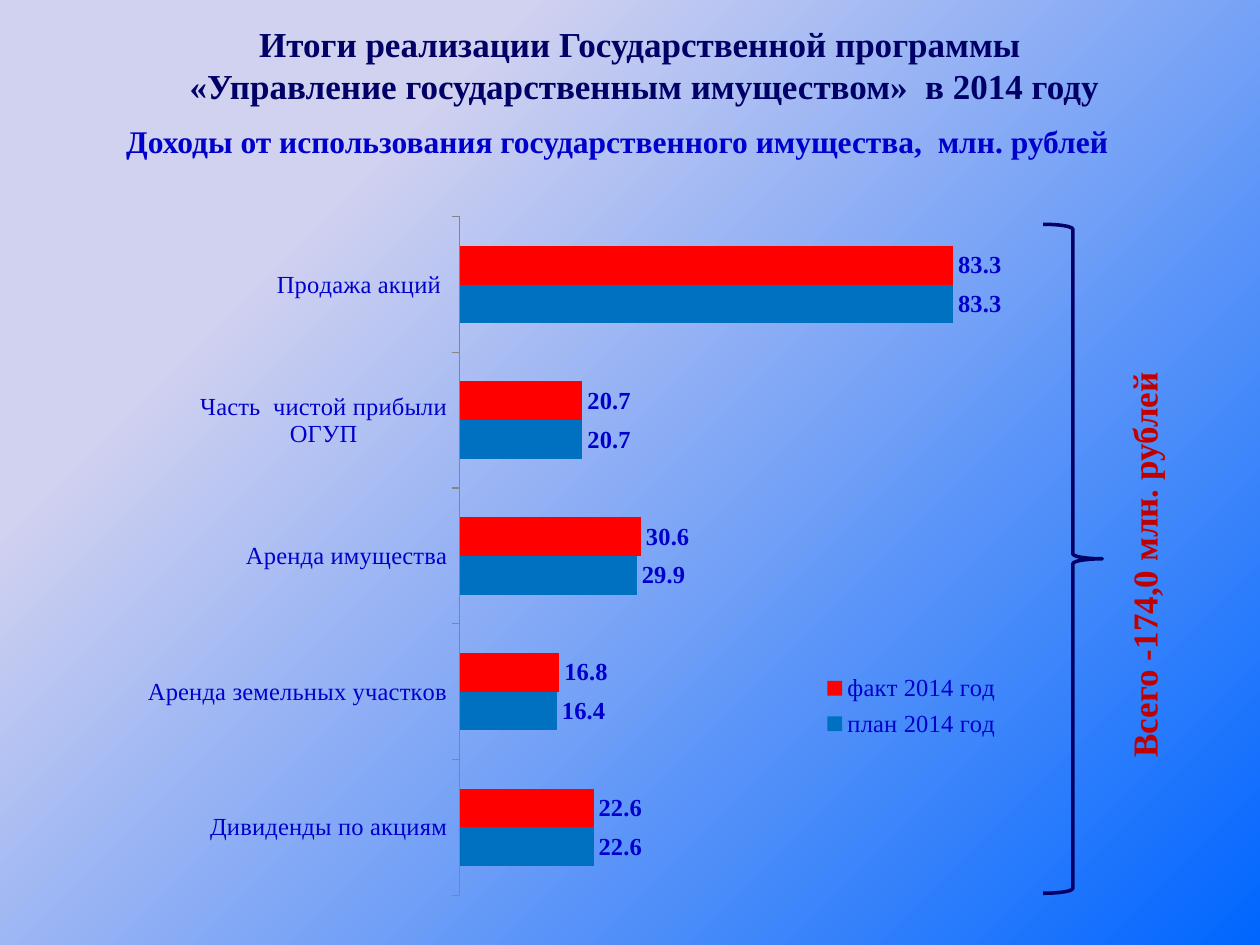
from lxml import etree
from pptx import Presentation
from pptx.chart.data import CategoryChartData
from pptx.dml.color import RGBColor
from pptx.enum.chart import XL_CHART_TYPE, XL_LABEL_POSITION, XL_LEGEND_POSITION, XL_TICK_MARK
from pptx.enum.shapes import MSO_SHAPE
from pptx.enum.text import MSO_ANCHOR, PP_ALIGN
from pptx.oxml.ns import qn
from pptx.util import Inches, Pt

BAR = XL_CHART_TYPE.BAR_CLUSTERED
OUTSIDE_END = XL_LABEL_POSITION.OUTSIDE_END
LEGEND_RIGHT = XL_LEGEND_POSITION.RIGHT
TICK_OUT, TICK_NONE = XL_TICK_MARK.OUTSIDE, XL_TICK_MARK.NONE
RIGHT_BRACE = MSO_SHAPE.RIGHT_BRACE
TOP, MIDDLE = MSO_ANCHOR.TOP, MSO_ANCHOR.MIDDLE
LEFT, CENTER = PP_ALIGN.LEFT, PP_ALIGN.CENTER

FONT = "Times New Roman"
NAVY = RGBColor(0x00, 0x00, 0x66)
BLUE = RGBColor(0x00, 0x00, 0xCC)
DARK_RED = RGBColor(0xC0, 0x00, 0x00)
RED = RGBColor(0xFF, 0x00, 0x00)
PLAN_BLUE = RGBColor(0x00, 0x70, 0xC0)
GREY = RGBColor(0x86, 0x86, 0x86)
LAVENDER = RGBColor(0xD1, 0xD1, 0xF0)
BRIGHT_BLUE = RGBColor(0x00, 0x66, 0xFF)

CATEGORIES = ["Дивиденды по акциям", "Аренда земельных участков", "Аренда имущества",
              "Часть  чистой прибыли ОГУП", "Продажа акций "]
SERIES = [
    ("план 2014 год", [22.6, 16.4, 29.9, 20.7, 83.3], PLAN_BLUE),
    ("факт 2014 год", [22.6, 16.8, 30.6, 20.7, 83.3], RED),
]


def set_font(font, size, color, bold=False):
    font.name = FONT
    font.size = Pt(size)
    font.bold = bold
    font.color.rgb = color


def set_background(s):
    fill = s.background.fill
    fill.gradient()
    fill.gradient_angle = 315
    for stop, position, color in zip(fill.gradient_stops, (0.24, 1), (LAVENDER, BRIGHT_BLUE)):
        stop.position = position
        stop.color.rgb = color


def add_text(s, box, lines, size, color, align=CENTER, anchor=TOP):
    tf = s.shapes.add_textbox(*map(Inches, box)).text_frame
    tf.word_wrap = True
    tf.vertical_anchor = anchor
    for i, line in enumerate(lines):
        p = tf.paragraphs[0] if i == 0 else tf.add_paragraph()
        p.text = line
        p.alignment = align
        set_font(p.font, size, color, bold=True)
    return tf


def set_layout(parent, x, y, w, h, inner=False):
    """Place a chart part by fractions of the chart area."""
    for old in parent.findall(qn("c:layout")):
        parent.remove(old)
    layout = etree.Element(qn("c:layout"))
    manual = etree.SubElement(layout, qn("c:manualLayout"))
    values = [("layoutTarget", "inner")] if inner else []
    values += [("xMode", "edge"), ("yMode", "edge"), ("x", x), ("y", y), ("w", w), ("h", h)]
    for tag, value in values:
        etree.SubElement(manual, qn(f"c:{tag}")).set("val", str(value))
    position = parent.find(qn("c:legendPos"))
    parent.insert(0 if position is None else parent.index(position) + 1, layout)


def add_income_chart(s, box):
    data = CategoryChartData(number_format="0.0")
    data.categories = CATEGORIES
    for name, values, _ in SERIES:
        data.add_series(name, values)
    chart = s.shapes.add_chart(BAR, *map(Inches, box), data).chart
    chart.has_title = False
    chart.font.name = FONT
    chart.font.size = Pt(10)

    # Bars and their values
    plot = chart.plots[0]
    plot.gap_width = 150
    plot.overlap = 0
    plot.vary_by_categories = False
    for series, (_, _, color) in zip(plot.series, SERIES):
        series.format.fill.solid()
        series.format.fill.fore_color.rgb = color
        labels = series.data_labels
        labels.show_value = True
        labels.number_format = "0.0"
        labels.number_format_is_linked = False
        labels.position = OUTSIDE_END
        set_font(labels.font, 14, BLUE, bold=True)

    # Axes
    axis = chart.category_axis
    axis.major_tick_mark = TICK_OUT
    axis.minor_tick_mark = TICK_NONE
    axis.format.line.color.rgb = GREY
    set_font(axis.tick_labels.font, 14, BLUE)
    axis = chart.value_axis
    axis.visible = False
    axis.has_major_gridlines = False
    axis.minimum_scale, axis.maximum_scale = 0, 90

    # Legend and plot position
    chart.has_legend = True
    legend = chart.legend
    legend.position = LEGEND_RIGHT
    legend.include_in_layout = False
    set_font(legend.font, 14, BLUE)
    chart_xml = chart.element.find(qn("c:chart"))
    set_layout(chart_xml.find(qn("c:legend")), 0.74, 0.66, 0.22, 0.11)
    set_layout(chart_xml.find(qn("c:plotArea")), 0.35, 0.03, 0.59, 0.95, inner=True)


def add_total(s, brace_box, label_box):
    brace = s.shapes.add_shape(RIGHT_BRACE, *map(Inches, brace_box))
    brace.shadow.inherit = False
    brace.fill.background()
    brace.line.color.rgb = NAVY
    brace.line.width = Pt(2)
    tf = add_text(s, label_box, ["Всего -174,0 млн. рублей"], 20, DARK_RED, align=LEFT)
    tf._txBody.bodyPr.set("vert", "vert270")


def main():
    prs = Presentation()
    prs.slide_width, prs.slide_height = Inches(10), Inches(7.5)
    s = prs.slides.add_slide(prs.slide_layouts[6])
    set_background(s)
    add_text(s, (0.4, 0.85, 9, 0.54),
             ["Доходы от использования государственного имущества,  млн. рублей"],
             18, BLUE, anchor=MIDDLE)
    add_total(s, (8.28, 1.78, 0.47, 5.31), (8.86, 2.49, 0.54, 3.62))
    add_income_chart(s, (1.14, 1.55, 7.17, 5.67))
    add_text(s, (0.35, 0.13, 9.53, 0.77),
             ["Итоги реализации Государственной программы ",
              "«Управление государственным имуществом»  в 2014 году"], 20, NAVY)
    prs.save("out.pptx")


if __name__ == "__main__":
    main()
